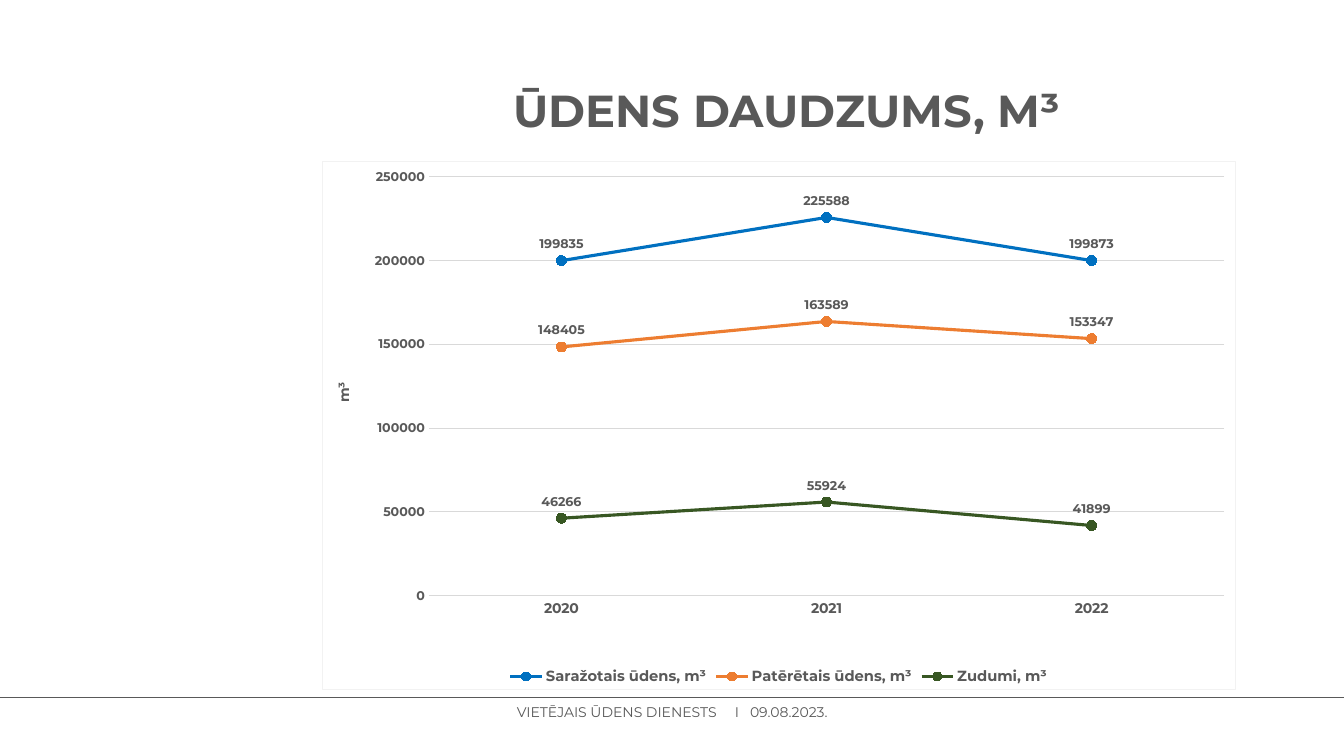
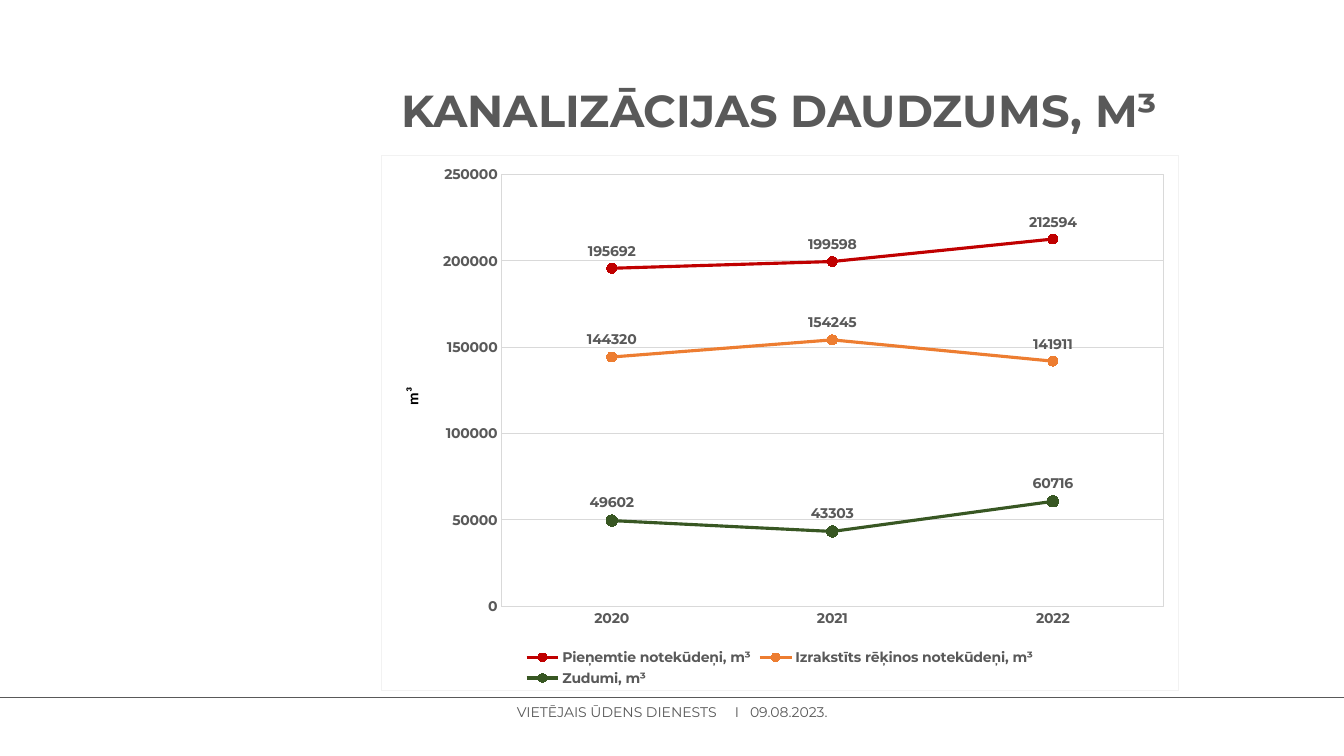
import pptx
import pptx.chart.data
import pptx.dml.color
import pptx.enum.chart
import pptx.enum.shapes
import pptx.enum.text
import pptx.oxml
import pptx.oxml.ns
import pptx.util
import lxml.etree

Pt = pptx.util.Pt
qn = pptx.oxml.ns.qn
FONT = "Montserrat"
COLORS = {
    "text": "595959",
    "black": "000000",
    "grid": "D9D9D9",
    "border": "F2F2F2",
    "white": "FFFFFF",
    "blue": "0070C0",
    "red": "C00000",
    "orange": "ED7D31",
    "green": "385723",
}
YEARS = ["2020", "2021", "2022"]
FOOTER_PARTS = [
    ("VIETĒJAIS ŪDENS DIENESTS", 0),
    (" ", 10.5),
    ("I", 0),
    (" ", 5.2),
    ("09.08.2023.", 0),
]
SLIDES = [
    {
        "title": "ŪDENS DAUDZUMS, M³",
        "title_box": (229.7, 28.8, 664.6, 104.4),
        "chart_box": (229.7, 115.2, 653, 378),
        "plot": (0.117, 0.028, 0.871, 0.794),
        "plot_frame": False,
        "value_size": 9,
        "legend_size": 10.5,
        "unit_font": (10, "text", FONT),
        "border_width": 0.75,
        "series": [
            ("Saražotais ūdens, m³", (199835, 225588, 199873), "blue", 7),
            ("Patērētais ūdens, m³", (148405, 163589, 153347), "orange", 7),
            ("Zudumi, m³", (46266, 55924, 41899), "green", 7),
        ],
    },
    {
        "title": "KANALIZĀCIJAS DAUDZUMS, M³",
        "title_box": (181.4, 28.8, 751, 104.4),
        "chart_box": (272.2, 110.9, 569.5, 382.3),
        "plot": (0.151, 0.036, 0.83, 0.807),
        "plot_frame": True,
        "value_size": 10,
        "legend_size": 10,
        "unit_font": (11, "black", "Calibri"),
        "border_width": 0,
        "series": [
            ("Pieņemtie notekūdeņi, m³", (195692, 199598, 212594), "red", 7),
            ("Izrakstīts rēķinos notekūdeņi, m³", (144320, 154245, 141911), "orange", 7),
            ("Zudumi, m³", (49602, 43303, 60716), "green", 8),
        ],
    },
]


def style_font(font, size, bold=True, color="text", name=FONT):
    font.size = Pt(size)
    font.bold = bold
    font.name = name
    font.color.rgb = pptx.dml.color.RGBColor.from_string(COLORS[color])


def frame_xml(fill, line, width):
    return pptx.oxml.parse_xml(
        f'<c:spPr {pptx.oxml.ns.nsdecls("c", "a")}>'
        f'<a:solidFill><a:srgbClr val="{COLORS[fill]}"/></a:solidFill>'
        f'<a:ln w="{Pt(width)}"><a:solidFill><a:srgbClr val="{COLORS[line]}"/></a:solidFill></a:ln>'
        "</c:spPr>"
    )


presentation = pptx.Presentation()
presentation.slide_width = Pt(960)
presentation.slide_height = Pt(540)

for content in SLIDES:
    slide = presentation.slides.add_slide(presentation.slide_layouts[6])

    footer_line = slide.shapes.add_connector(
        pptx.enum.shapes.MSO_CONNECTOR.STRAIGHT, Pt(0), Pt(498.2), Pt(960), Pt(498.2)
    )
    footer_line.line.color.rgb = pptx.dml.color.RGBColor.from_string(COLORS["text"])
    footer_line.line.width = Pt(0.75)
    lxml.etree.SubElement(footer_line.element.spPr, qn("a:effectLst"))

    footer = slide.shapes.add_textbox(Pt(5), Pt(502.6), Pt(950.4), Pt(12.2))
    text_frame = footer.text_frame
    text_frame.word_wrap = True
    text_frame.margin_left = text_frame.margin_right = Pt(0)
    text_frame.margin_top = text_frame.margin_bottom = Pt(0)
    paragraph = text_frame.paragraphs[0]
    paragraph.alignment = pptx.enum.text.PP_ALIGN.CENTER
    paragraph.line_spacing = Pt(12)
    for text, spacing in FOOTER_PARTS:
        run = paragraph.add_run()
        run.text = text
        style_font(run.font, 10, bold=False)
        if spacing:
            run.font._element.set("spc", str(round(spacing * 100)))

    title = slide.shapes.add_textbox(*map(Pt, content["title_box"]))
    text_frame = title.text_frame
    text_frame.word_wrap = True
    text_frame.vertical_anchor = pptx.enum.text.MSO_ANCHOR.MIDDLE
    text_frame.text = content["title"]
    paragraph = text_frame.paragraphs[0]
    paragraph.alignment = pptx.enum.text.PP_ALIGN.CENTER
    paragraph.line_spacing = 0.9
    style_font(paragraph.runs[0].font, 32)

    chart_data = pptx.chart.data.CategoryChartData()
    chart_data.categories = YEARS
    for name, values, color, marker_size in content["series"]:
        chart_data.add_series(name, values)
    chart = slide.shapes.add_chart(
        pptx.enum.chart.XL_CHART_TYPE.LINE_MARKERS, *map(Pt, content["chart_box"]), chart_data
    ).chart
    style_font(chart.font, 10)
    chart.has_title = False
    chart.has_legend = True
    chart.legend.position = pptx.enum.chart.XL_LEGEND_POSITION.BOTTOM
    chart.legend.include_in_layout = False
    style_font(chart.legend.font, content["legend_size"])
    chart.plots[0].vary_by_categories = False

    value_axis = chart.value_axis
    value_axis.minimum_scale = 0
    value_axis.maximum_scale = 250000
    value_axis.major_unit = 50000
    value_axis.format.line.fill.background()
    value_axis.has_major_gridlines = True
    value_axis.axis_title.text_frame.text = "m³"
    unit_size, unit_color, unit_name = content["unit_font"]
    unit_run = value_axis.axis_title.text_frame.paragraphs[0].runs[0]
    style_font(unit_run.font, unit_size, color=unit_color, name=unit_name)
    for body in value_axis.axis_title._element.iter(qn("a:bodyPr")):
        body.set("rot", "-5400000")
        body.set("vert", "horz")

    for line in (value_axis.major_gridlines.format.line, chart.category_axis.format.line):
        line.color.rgb = pptx.dml.color.RGBColor.from_string(COLORS["grid"])
        line.width = Pt(0.75)
    for axis, size in ((chart.category_axis, 10), (value_axis, content["value_size"])):
        axis.major_tick_mark = pptx.enum.chart.XL_TICK_MARK.NONE
        axis.minor_tick_mark = pptx.enum.chart.XL_TICK_MARK.NONE
        style_font(axis.tick_labels.font, size)

    for series, (name, values, color, marker_size) in zip(chart.plots[0].series, content["series"]):
        series_color = pptx.dml.color.RGBColor.from_string(COLORS[color])
        series.smooth = False
        series.format.line.color.rgb = series_color
        series.format.line.width = Pt(2.25)
        series.marker.style = pptx.enum.chart.XL_MARKER_STYLE.CIRCLE
        series.marker.size = marker_size
        series.marker.format.fill.solid()
        series.marker.format.fill.fore_color.rgb = series_color
        series.marker.format.line.color.rgb = series_color
        labels = series.data_labels
        labels.show_value = True
        labels.position = pptx.enum.chart.XL_LABEL_POSITION.ABOVE
        style_font(labels.font, content["value_size"])

    chart_element = chart._chartSpace.find(qn("c:chart"))
    chart_element.addnext(frame_xml("white", "border", content["border_width"]))
    plot_area = chart_element.find(qn("c:plotArea"))
    for layout in plot_area.findall(qn("c:layout")):
        plot_area.remove(layout)
    layout = lxml.etree.Element(qn("c:layout"))
    plot_area.insert(0, layout)
    manual_layout = lxml.etree.SubElement(layout, qn("c:manualLayout"))
    layout_values = [("layoutTarget", "inner"), ("xMode", "edge"), ("yMode", "edge")]
    for tag, value in layout_values + list(zip("xywh", content["plot"])):
        lxml.etree.SubElement(manual_layout, qn(f"c:{tag}")).set("val", str(value))
    if content["plot_frame"]:
        plot_area.append(frame_xml("white", "grid", 0.75))

presentation.save("out.pptx")
